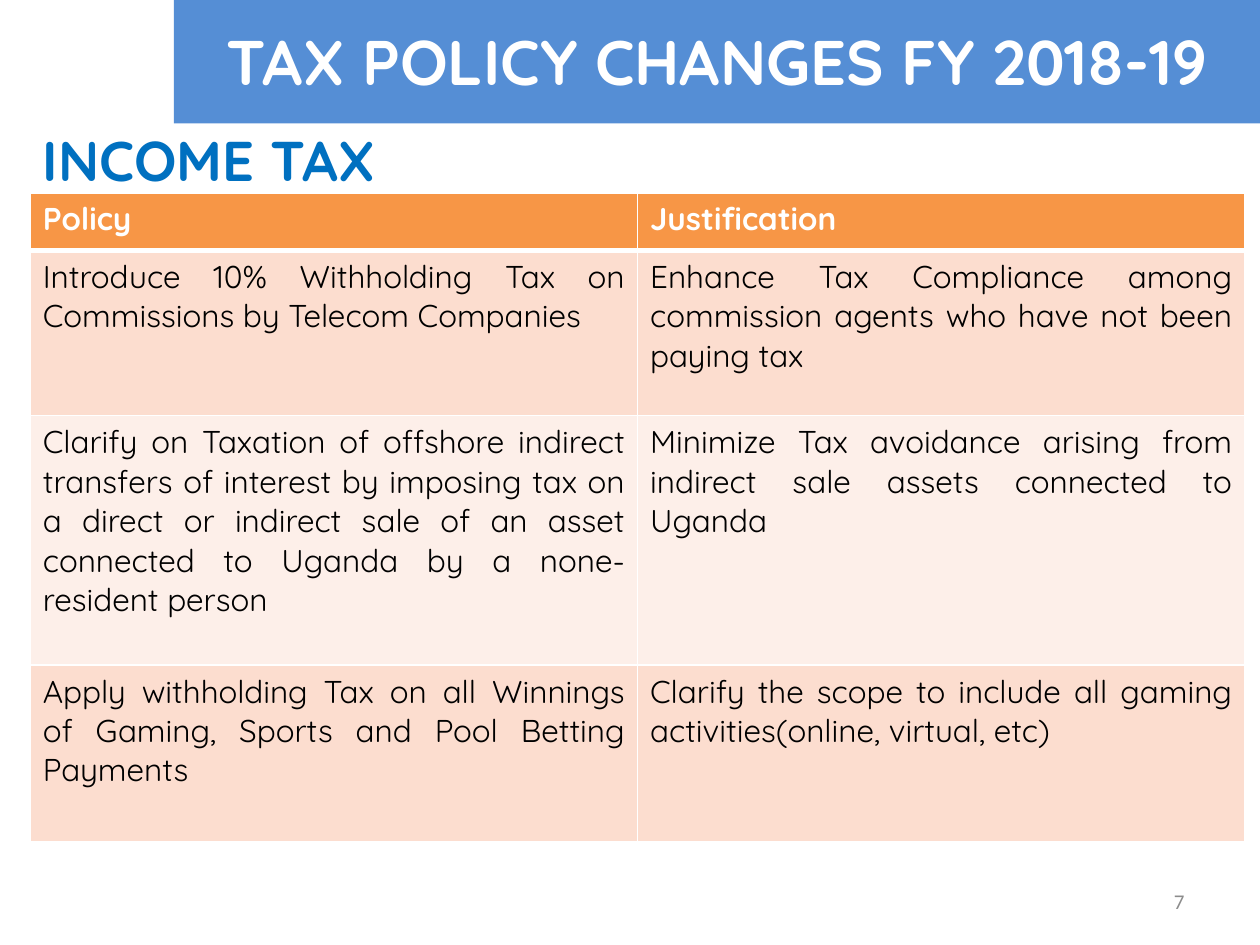
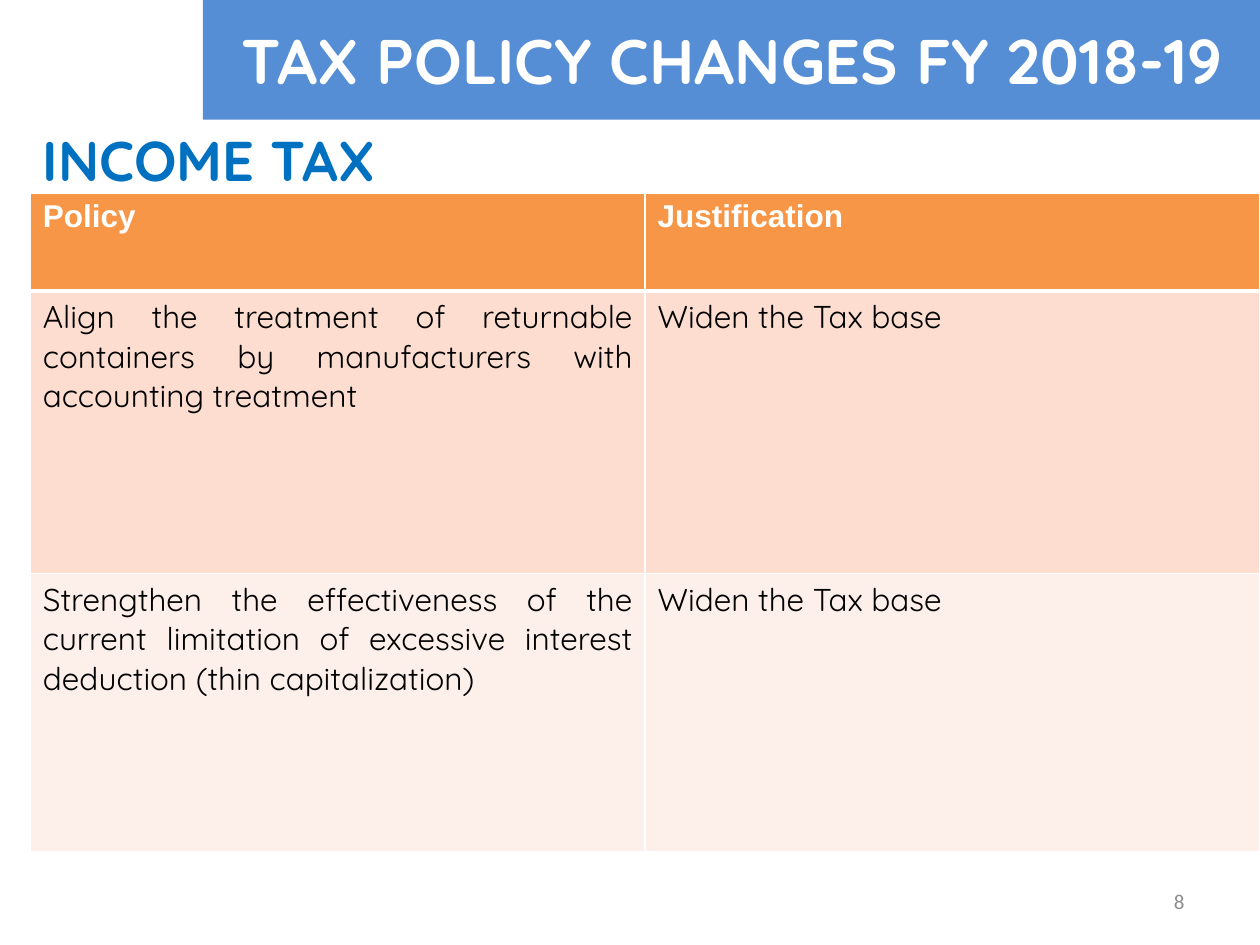
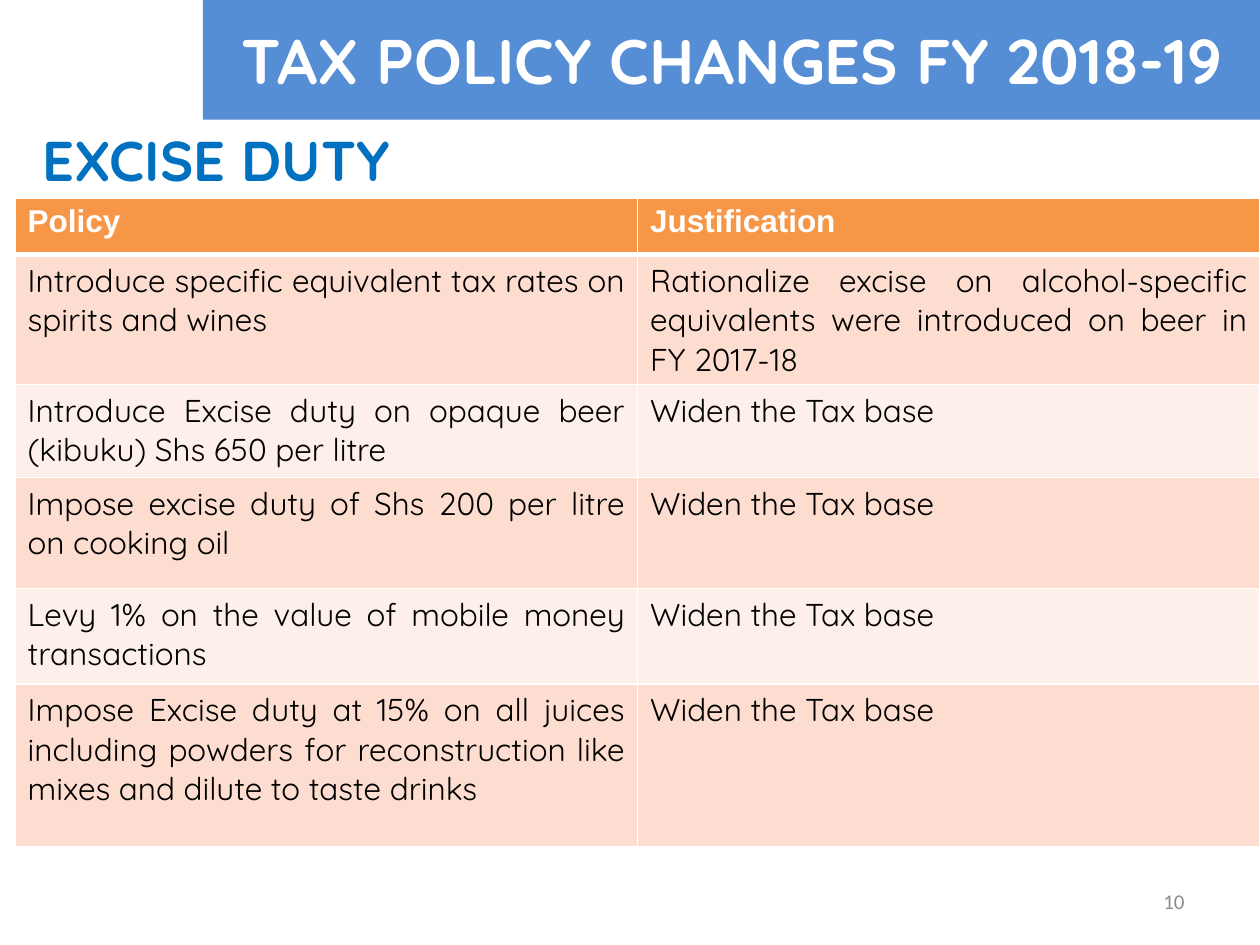
import pptx
import pptx.util
import pptx.dml.color
import pptx.enum.shapes
import pptx.enum.text
import lxml.etree
from pptx.oxml.ns import qn
from pptx.util import Inches, Pt

COLORS = {
    "band": "558ED5",
    "heading": "0070C0",
    "header": "F79646",
    "odd_row": "FCDDCF",
    "even_row": "FDEFE9",
    "white": "FFFFFF",
    "text": "000000",
    "number": "8C8C8C",
}
FONT = "Quicksand"
ALIGN = pptx.enum.text.PP_ALIGN
TITLE = "TAX POLICY CHANGES FY 2018-19"
COLUMN_TITLES = ("Policy", "Justification")
WIDEN = "Widen the Tax base"
WIDE_BAND = (1.38, -0.02, 8.62, 1)
NARROW_BAND = (1.61, -0.01, 8.39, 0.96)

SLIDES = [
    {
        "band": WIDE_BAND, "heading": "INCOME TAX", "number": 7, "header_font": FONT,
        "table": (0.24, 1.53, 9.64), "row_heights": (0.46, 1.31, 1.98, 1.4),
        "policies": [
            ("Introduce 10% Withholding Tax on Commissions by Telecom Companies",
             "Enhance Tax Compliance among commission agents who have not been paying tax"),
            ("Clarify on Taxation of offshore indirect transfers of interest by imposing tax on "
             "a direct or indirect sale of an asset connected to Uganda by a none-resident person",
             "Minimize Tax avoidance arising from indirect sale assets connected to Uganda"),
            ("Apply withholding Tax on all Winnings of Gaming, Sports and Pool Betting Payments",
             "Clarify the scope to include all gaming activities(online, virtual, etc)"),
        ],
    },
    {
        "band": NARROW_BAND, "heading": "INCOME TAX", "number": 8, "header_font": "Arial",
        "table": (0.24, 1.53, 9.76), "row_heights": (0.78, 2.24, 2.21),
        "policies": [
            ("Align the treatment of returnable containers by manufacturers with "
             "accounting treatment", WIDEN),
            ("Strengthen the effectiveness of the current limitation of excessive interest "
             "deduction (thin capitalization)", WIDEN),
        ],
    },
    {
        "band": NARROW_BAND, "heading": "EXCISE DUTY", "number": 10, "header_font": "Arial",
        "table": (0.12, 1.57, 9.88), "row_heights": (0.45, 1.03, 0.74, 0.88, 0.76, 1.29),
        "policies": [
            ("Introduce specific equivalent tax rates on spirits and wines",
             "Rationalize excise on alcohol-specific equivalents were introduced on beer "
             "in FY 2017-18"),
            ("Introduce Excise duty on opaque beer (kibuku) Shs 650 per litre", WIDEN),
            ("Impose excise duty of Shs 200 per litre on cooking oil", WIDEN),
            ("Levy 1% on the value of mobile money transactions", WIDEN),
            ("Impose Excise duty at 15% on all juices including powders for reconstruction "
             "like mixes and dilute to taste drinks", WIDEN),
        ],
    },
]


def rgb(name):
    return pptx.dml.color.RGBColor.from_string(COLORS[name])


def write_text(text_frame, text, size, color, bold=False, font=FONT, align=ALIGN.LEFT):
    text_frame.text = text
    text_frame.word_wrap = True
    paragraph = text_frame.paragraphs[0]
    paragraph.alignment = align
    for run in paragraph.runs:
        run.font.name = font
        run.font.size = Pt(size)
        run.font.bold = bold
        run.font.color.rgb = rgb(color)


def add_title_band(slide, box):
    band = slide.shapes.add_shape(
        pptx.enum.shapes.MSO_SHAPE.RECTANGLE, *map(Inches, box))
    band.shadow.inherit = False
    band.fill.solid()
    band.fill.fore_color.rgb = rgb("band")
    band.line.fill.background()
    band.text_frame.vertical_anchor = pptx.enum.text.MSO_ANCHOR.MIDDLE
    write_text(band.text_frame, TITLE, 36, "white", bold=True, align=ALIGN.CENTER)


def add_heading(slide, text):
    heading = slide.shapes.add_textbox(*map(Inches, (0.24, 0.95, 9.76, 6.2)))
    write_text(heading.text_frame, text, 32, "heading", bold=True)


def add_slide_number(slide, number):
    box = slide.shapes.add_textbox(*map(Inches, (7.17, 6.95, 2.33, 0.4)))
    box.text_frame.vertical_anchor = pptx.enum.text.MSO_ANCHOR.MIDDLE
    write_text(box.text_frame, str(number), 12, "number", font="Calibri", align=ALIGN.RIGHT)


def set_borders(cell, top=1, bottom=1):
    """Draw white cell borders; call before the fill, which must follow them in the XML."""
    properties = cell._tc.get_or_add_tcPr()
    for side, width in (("L", 1), ("R", 1), ("T", top), ("B", bottom)):
        line = lxml.etree.SubElement(properties, qn(f"a:ln{side}"), w=str(Pt(width)))
        fill = lxml.etree.SubElement(line, qn("a:solidFill"))
        lxml.etree.SubElement(fill, qn("a:srgbClr"), val=COLORS["white"])


def fill_cell(cell, color):
    cell.fill.solid()
    cell.fill.fore_color.rgb = rgb(color)


def add_policy_table(slide, position, row_heights, policies, header_font):
    left, top, width = position
    table = slide.shapes.add_table(
        len(row_heights), len(COLUMN_TITLES), Inches(left), Inches(top),
        Inches(width), Inches(sum(row_heights))).table
    for row, height in zip(table.rows, row_heights):
        row.height = Inches(height)
    for row_index, texts in enumerate([COLUMN_TITLES, *policies]):
        for column_index, text in enumerate(texts):
            cell = table.cell(row_index, column_index)
            if row_index == 0:
                set_borders(cell, bottom=3)
                fill_cell(cell, "header")
                write_text(cell.text_frame, text, 18, "white", bold=True, font=header_font)
            else:
                set_borders(cell, top=3 if row_index == 1 else 1)
                fill_cell(cell, "odd_row" if row_index % 2 else "even_row")
                write_text(cell.text_frame, text, 18, "text", align=ALIGN.JUSTIFY)


def main():
    presentation = pptx.Presentation()
    presentation.slide_width = Inches(10)
    presentation.slide_height = Inches(7.5)
    for content in SLIDES:
        slide = presentation.slides.add_slide(presentation.slide_layouts[6])
        add_title_band(slide, content["band"])
        add_heading(slide, content["heading"])
        add_slide_number(slide, content["number"])
        add_policy_table(slide, content["table"], content["row_heights"],
                         content["policies"], content["header_font"])
    presentation.save("out.pptx")


if __name__ == "__main__":
    main()
